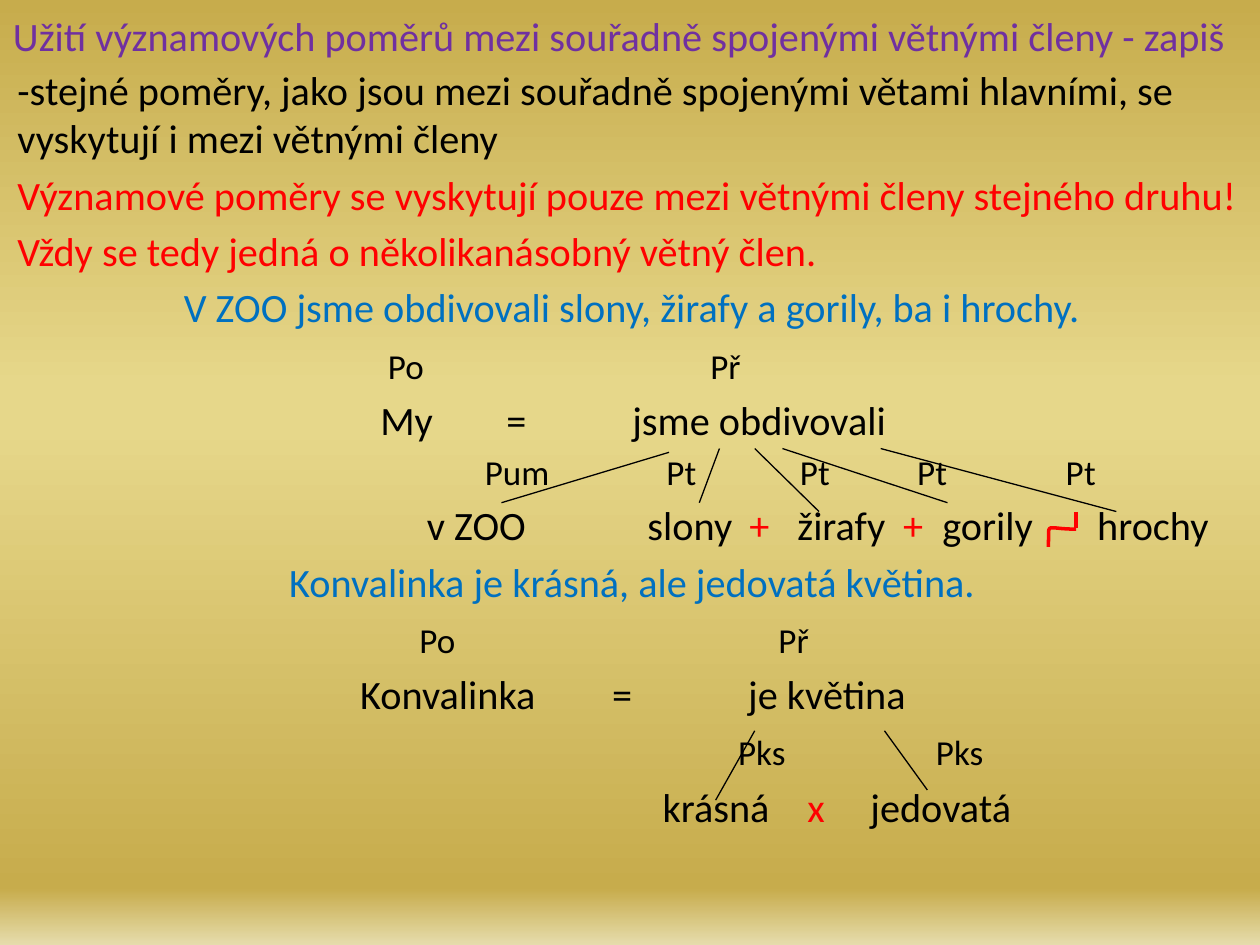
from lxml import etree
from pptx import Presentation
from pptx.dml.color import RGBColor
from pptx.enum import shapes, text
from pptx.oxml import ns
from pptx.util import Inches, Pt

COLORS = {"purple": "7030A0", "black": "000000", "red": "FF0000", "blue": "0070C0"}
BACKGROUND = [(0, "C7AC4C"), (41, "E6D78A"), (45, "E6D78A"), (94, "C7AC4C"), (100, "E6DCAC")]
FONT = "Calibri"
MAIN, LABEL = 23, 20  # point sizes of sentences and of sentence-member labels

TITLE = "Užití významových poměrů mezi souřadně spojenými větnými členy - zapiš"

# Each row: alignment, tab stops in inches, runs of (text, colour, size)
ROWS = [
    ("LEFT", [], [("-stejné poměry, jako jsou mezi souřadně spojenými větami hlavními, se "
                   "vyskytují i mezi větnými členy", "black", MAIN)]),
    ("LEFT", [], [("Významové poměry se vyskytují pouze mezi větnými členy stejného druhu!",
                   "red", MAIN)]),
    ("LEFT", [], [("Vždy se tedy jedná o několikanásobný větný člen.", "red", MAIN)]),
    ("CENTER", [], [("V ZOO jsme obdivovali slony, žirafy a gorily, ba i hrochy.", "blue", MAIN)]),
    ("LEFT", [2.94, 5.5], [("\t", "black", MAIN), ("Po\tPř", "black", LABEL)]),
    ("LEFT", [2.88, 3.88, 4.88], [("\tMy\t=\tjsme obdivovali", "black", MAIN)]),
    ("LEFT", [3.71, 5.15, 6.21, 7.14, 8.32], [("\tPum\tPt\tPt\tPt\tPt", "black", LABEL)]),
    ("LEFT", [3.25, 5, 5.81, 6.19, 7.03, 7.34, 8.57],
     [("\tv ZOO\tslony", "black", MAIN), ("\t+", "red", MAIN), ("\tžirafy", "black", MAIN),
      ("\t+", "red", MAIN), ("\tgorily\throchy", "black", MAIN)]),
    ("CENTER", [], [("Konvalinka je krásná, ale jedovatá květina.", "blue", MAIN)]),
    ("LEFT", [3.19, 6.04], [("\t", "black", MAIN), ("Po\tPř", "black", LABEL)]),
    ("LEFT", [2.72, 4.72, 5.8], [("\tKonvalinka\t=\tje květina", "black", MAIN)]),
    ("LEFT", [5.72, 7.29], [("\t", "black", MAIN), ("Pks\tPks", "black", LABEL)]),
    ("LEFT", [5.12, 6.27, 6.77],
     [("\tkrásná", "black", MAIN), ("\tx", "red", MAIN), ("\tjedovatá", "black", MAIN)]),
]

BRANCHES = [
    (5.31, 3.59, 3.98, 3.99), (5.71, 3.56, 5.55, 3.99), (5.99, 3.56, 6.5, 4.06),
    (6.21, 3.56, 7.52, 3.99), (6.99, 3.56, 8.86, 4.06),
    (5.99, 5.8, 5.68, 6.35), (7.02, 5.8, 7.36, 6.27),
]
HOOK = [(8.32, 4.34), (8.33, 4.13), (8.28, 4.2), (8.54, 4.2)]


def rgb(name):
    return RGBColor.from_string(COLORS[name])


def paint_background(slide):
    fill = slide.background.fill
    fill.gradient()
    fill.gradient_angle = 270
    stops = slide.background._cSld.find(".//" + ns.qn("a:gsLst"))
    for stop in list(stops):
        stops.remove(stop)
    for percent, color in BACKGROUND:
        stop = etree.SubElement(stops, ns.qn("a:gs"), pos=str(percent * 1000))
        etree.SubElement(stop, ns.qn("a:srgbClr"), val=color)


def format_frame(frame, anchor, side_margin):
    settings = {"word_wrap": True, "auto_size": text.MSO_AUTO_SIZE.NONE,
                "vertical_anchor": anchor,
                "margin_left": Inches(side_margin), "margin_right": Inches(side_margin)}
    for name, value in settings.items():
        setattr(frame, name, value)


def add_run(paragraph, wording, color, size):
    run = paragraph.add_run()
    run.text = wording
    for name, value in {"name": FONT, "size": Pt(size), "bold": False}.items():
        setattr(run.font, name, value)
    run.font.color.rgb = rgb(color)


def set_tabs(paragraph, positions):
    tabs = etree.SubElement(paragraph._p.get_or_add_pPr(), ns.qn("a:tabLst"))
    for position in positions:
        etree.SubElement(tabs, ns.qn("a:tab"), pos=str(int(Inches(position))), algn="l")


def place_title(slide):
    title = slide.shapes.title
    box = {"left": 0, "top": -0.19, "width": 9.84, "height": 0.94}
    for name, value in box.items():
        setattr(title, name, Inches(value))
    format_frame(title.text_frame, text.MSO_ANCHOR.MIDDLE, 0.05)
    heading = title.text_frame.paragraphs[0]
    heading.alignment = text.PP_ALIGN.CENTER
    add_run(heading, TITLE, "purple", MAIN)


def add_explanation(slide):
    box = slide.shapes.add_textbox(Inches(0.04), Inches(0.47), Inches(9.96), Inches(6.91))
    frame = box.text_frame
    format_frame(frame, text.MSO_ANCHOR.TOP, 0.1)
    for index, (alignment, tabs, runs) in enumerate(ROWS):
        row = frame.add_paragraph() if index else frame.paragraphs[0]
        row.alignment = getattr(text.PP_ALIGN, alignment)
        row.space_before = Pt(0.2 * runs[0][2])
        if tabs:
            set_tabs(row, tabs)
        for run in runs:
            add_run(row, *run)


def add_line(slide, ends, color="black", width=0.75):
    line = slide.shapes.add_connector(shapes.MSO_CONNECTOR.STRAIGHT, *map(Inches, ends))
    line.line.color.rgb = rgb(color)
    line.line.width = Pt(width)
    etree.SubElement(line._element.spPr, ns.qn("a:effectLst"))


def bezier_point(controls, t):
    weights = ((1 - t) ** 3, 3 * t * (1 - t) ** 2, 3 * t * t * (1 - t), t ** 3)
    return tuple(Inches(sum(w * p[axis] for w, p in zip(weights, controls)))
                 for axis in (0, 1))


def add_gradation_sign(slide):
    """Red hook between the last two members, standing for gradation."""
    steps = 16
    points = [bezier_point(HOOK, i / steps) for i in range(steps + 1)]
    builder = slide.shapes.build_freeform(*points[0])
    builder.add_line_segments(points[1:], close=False)
    hook = builder.convert_to_shape()
    hook.shadow.inherit = False
    hook.fill.background()
    hook.line.color.rgb = rgb("red")
    hook.line.width = Pt(2)
    add_line(slide, (8.54, 4.19, 8.54, 4.06), "red", 2)


def main():
    deck = Presentation()
    deck.slide_width, deck.slide_height = Inches(10), Inches(7.5)
    slide = deck.slides.add_slide(deck.slide_layouts[5])
    paint_background(slide)
    place_title(slide)
    add_explanation(slide)
    add_gradation_sign(slide)
    for branch in BRANCHES:
        add_line(slide, branch)
    deck.save("out.pptx")


if __name__ == "__main__":
    main()
